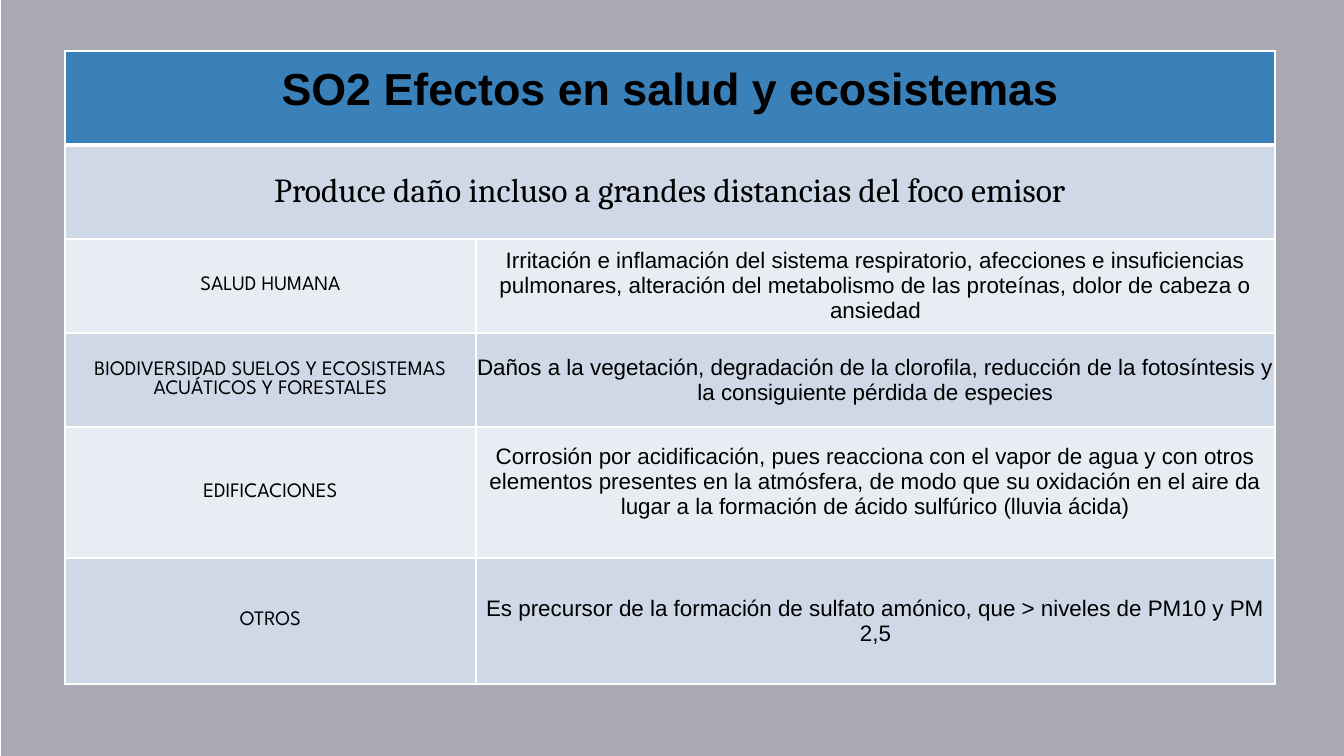
from lxml.etree import SubElement
from pptx import Presentation
from pptx.dml.color import RGBColor
from pptx.enum.shapes import MSO_SHAPE as Shape
from pptx.enum.text import MSO_ANCHOR as Anchor, PP_ALIGN as Align
from pptx.oxml import parse_xml
from pptx.oxml.ns import nsdecls, qn
from pptx.util import Emu, Pt

WIDTH, HEIGHT = 1344, 756
NAVY = RGBColor(0x16, 0x17, 0x32)
BLUE = RGBColor(0x3A, 0x81, 0xBA)
MIST = RGBColor(0xCE, 0xD8, 0xE7)
PALE = RGBColor(0xE8, 0xED, 0xF3)
BLACK = RGBColor(0, 0, 0)
WHITE = RGBColor(0xFF, 0xFF, 0xFF)

TITLE = ("Arial", 24, True)
SUBTITLE = ("Cambria", 18, False)
COLUMN_STYLES = [("League Spartan", 11, False), ("Arial", 12, False)]

HEADINGS = [
    ("SO2 Efectos en salud y ecosistemas", TITLE, BLUE),
    ("Produce daño incluso a grandes distancias del foco emisor", SUBTITLE, MIST),
]
EFFECTS = [
    ("SALUD HUMANA",
     "Irritación e inflamación del sistema respiratorio, afecciones e insuficiencias "
     "pulmonares, alteración del metabolismo de las proteínas, dolor de cabeza o ansiedad"),
    ("BIODIVERSIDAD SUELOS Y ECOSISTEMAS ACUÁTICOS Y FORESTALES",
     "Daños a la vegetación, degradación de la clorofila, reducción de la fotosíntesis y "
     "la consiguiente pérdida de especies"),
    ("EDIFICACIONES",
     "Corrosión por acidificación, pues reacciona con el vapor de agua y con otros "
     "elementos presentes en la atmósfera, de modo que su oxidación en el aire da lugar "
     "a la formación de ácido sulfúrico (lluvia ácida)"),
    ("OTROS",
     "Es precursor de la formación de sulfato amónico, que > niveles de PM10 y PM 2,5"),
]
LEFT, TOP = 65, 51
COLUMN_WIDTHS = [411, 799]
ROW_HEIGHTS = [94, 94, 94, 94, 131, 126]
BOTTOM_INSETS = {(0, 0): 16, (4, 1): 22}


def px(length):
    """Turn slide pixels into EMU."""
    return Emu(round(length * 914400 / 134.4))


def add_backdrop(page):
    """Cover the page with a translucent navy tint."""
    backdrop = page.shapes.add_shape(Shape.RECTANGLE, px(1), 0, px(WIDTH - 1), px(HEIGHT))
    backdrop.shadow.inherit = False
    backdrop.line.fill.background()
    backdrop.fill.solid()
    backdrop.fill.fore_color.rgb = NAVY
    color = backdrop.fill._xPr.find(".//" + qn("a:srgbClr"))
    SubElement(color, qn("a:alpha"), val="37000")


def set_borders(cell, row):
    """Draw white cell edges, thick below the title."""
    widths = {"L": 1, "R": 1, "T": 3 if row == 1 else 1, "B": 3 if row == 0 else 1}
    properties = cell._tc.get_or_add_tcPr()
    for index, (side, width) in enumerate(widths.items()):
        properties.insert(index, parse_xml(
            f'<a:ln{side} {nsdecls("a")} w="{Pt(width)}"><a:solidFill>'
            f'<a:srgbClr val="{WHITE}"/></a:solidFill></a:ln{side}>'))


def write_cell(cell, text, style, bottom_inset):
    """Centre one styled run in a cell."""
    cell.margin_left = cell.margin_right = cell.margin_top = 0
    cell.margin_bottom = px(bottom_inset)
    cell.vertical_anchor = Anchor.MIDDLE
    para = cell.text_frame.paragraphs[0]
    para.alignment = Align.CENTER
    span = para.add_run()
    span.text = text
    span.font.name, span.font.size, span.font.bold = style[0], Pt(style[1]), style[2]
    span.font.color.rgb = BLACK


def add_effects_table(page):
    """Lay out the headings and the effects grid."""
    table = page.shapes.add_table(
        len(ROW_HEIGHTS), len(COLUMN_WIDTHS), px(LEFT), px(TOP),
        px(sum(COLUMN_WIDTHS)), px(sum(ROW_HEIGHTS))).table
    for column, width in zip(table.columns, COLUMN_WIDTHS):
        column.width = px(width)
    for line, height in zip(table.rows, ROW_HEIGHTS):
        line.height = px(height)

    rows = [([(text, style)], fill) for text, style, fill in HEADINGS]
    rows += [(list(zip(texts, COLUMN_STYLES)), (PALE, MIST)[index % 2])
             for index, texts in enumerate(EFFECTS)]
    for row, (entries, fill) in enumerate(rows):
        if len(entries) == 1:
            table.cell(row, 0).merge(table.cell(row, 1))
        for cell in table.rows[row].cells:
            cell.fill.solid()
            cell.fill.fore_color.rgb = fill
            set_borders(cell, row)
        for column, (text, style) in enumerate(entries):
            write_cell(table.cell(row, column), text, style, BOTTOM_INSETS.get((row, column), 0))


def main():
    """Build and save the deck."""
    deck = Presentation()
    deck.slide_width, deck.slide_height = px(WIDTH), px(HEIGHT)
    page = deck.slides.add_slide(deck.slide_layouts[6])
    add_backdrop(page)
    add_effects_table(page)
    deck.save("out.pptx")


if __name__ == "__main__":
    main()
